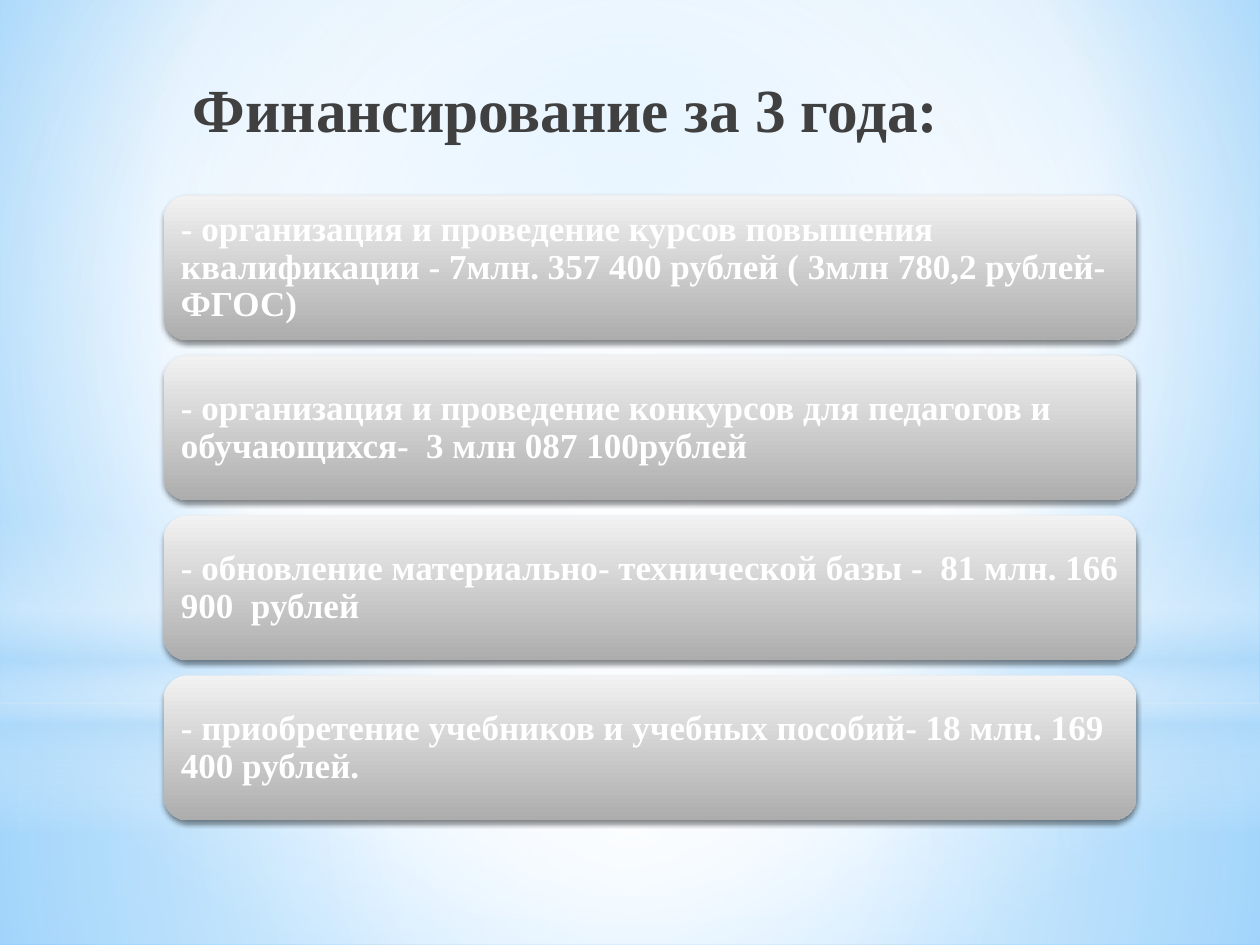
from pptx import Presentation
from pptx.dml.color import RGBColor
from pptx.enum.shapes import MSO_SHAPE
from pptx.enum.text import MSO_ANCHOR, PP_ALIGN
from pptx.oxml import parse_xml
from pptx.oxml.ns import nsdecls, qn
from pptx.util import Inches, Pt

RECT, OVAL, ROUNDED = MSO_SHAPE.RECTANGLE, MSO_SHAPE.OVAL, MSO_SHAPE.ROUNDED_RECTANGLE
LEFT, RIGHT = PP_ALIGN.LEFT, PP_ALIGN.RIGHT
TOP, MIDDLE = MSO_ANCHOR.TOP, MSO_ANCHOR.MIDDLE
FONT = "Times New Roman"

# Content
TITLE = "Финансирование за 3 года:"
EXPENSES = [
    "- организация и проведение курсов повышения квалификации - 7млн. 357 400 рублей ( 3млн 780,2 рублей- ФГОС)",
    "- организация и проведение конкурсов для педагогов и обучающихся-  3 млн 087 100рублей",
    "- обновление материально- технической базы -  81 млн. 166 900  рублей",
    "- приобретение учебников и учебных пособий- 18 млн. 169 400 рублей.",
]

# Gradient stops: position %, colour, opacity %
SKY = [(0, "9ED5FF", 100), (60, "FFFFFF", 100), (100, "5BB9FF", 100)]
SKY_FOCUS = (20, 10, 20, 60)
CENTRE = (50, 50, 50, 50)
CARD_FILL = [(0, "F2F2F2", 100), (100, "ADADAD", 100)]

# Backdrop layers: shape, top, height, stops, focus (None for top to bottom)
LAYERS = [
    (RECT, 5.58, 1.92, [(0, "FFFFFF", 91), (37, "FFFFFF", 76), (100, "B4DCFA", 79)], CENTRE),
    (RECT, 0, 5.58, [(0, "FFFFFF", 89), (48, "FFFFFF", 62), (100, "B4DCFA", 79)], CENTRE),
    (RECT, 4.12, 2.5, [(0, "FFFFFF", 0), (29, "FFFFFF", 30), (45, "B4DCFA", 40),
                       (55, "FFFFFF", 26), (65, "B4DCFA", 60), (100, "FFFFFF", 0)], None),
    (OVAL, 1.75, 5.58, [(0, "FFFFFF", 100), (56, "FFFFFF", 0)], CENTRE),
]

CARD_LEFT, CARD_TOP, CARD_WIDTH, CARD_HEIGHT, CARD_STEP = 1.3, 1.55, 7.72, 1.15, 1.27


def color(value):
    return RGBColor.from_string(value)


def set_gradient(fill, parent, stops, focus=None):
    """Fill with a circular gradient around focus, or a vertical one."""
    fill.gradient()
    stop_xml = "".join(
        f'<a:gs pos="{pos * 1000}"><a:srgbClr val="{shade}">'
        f'<a:alpha val="{opacity * 1000}"/></a:srgbClr></a:gs>'
        for pos, shade, opacity in stops)
    if focus:
        sides = " ".join(f'{side}="{part * 1000}"' for side, part in zip("ltrb", focus))
        direction = f'<a:path path="circle"><a:fillToRect {sides}/></a:path>'
    else:
        direction = '<a:lin ang="5400000" scaled="0"/>'
    gradient = parse_xml(f'<a:gradFill {nsdecls("a")} rotWithShape="1">'
                         f'<a:gsLst>{stop_xml}</a:gsLst>{direction}</a:gradFill>')
    parent.replace(parent.find(qn("a:gradFill")), gradient)


def add_panel(page, kind, left, top, width, height, stops, focus=None):
    panel = page.shapes.add_shape(kind, Inches(left), Inches(top), Inches(width), Inches(height))
    panel.shadow.inherit = False
    panel.line.fill.background()
    set_gradient(panel.fill, panel.element.spPr, stops, focus)
    return panel


def add_soft_shadow(shape):
    effects = shape.element.spPr.find(qn("a:effectLst"))
    effects.append(parse_xml(
        f'<a:outerShdw {nsdecls("a")} blurRad="{Pt(3.1)}" dist="{Pt(1.8)}" dir="5400000" '
        'rotWithShape="0"><a:srgbClr val="000000"><a:alpha val="45000"/></a:srgbClr></a:outerShdw>'))


def write(shape, text, size, shade, align, anchor):
    frame = shape.text_frame
    frame.word_wrap = True
    frame.vertical_anchor = anchor
    para = frame.paragraphs[0]
    para.text = text
    para.alignment = align
    font = para.font
    font.name, font.size, font.bold = FONT, Pt(size), True
    font.color.rgb = color(shade)
    return frame


deck = Presentation()
deck.slide_width, deck.slide_height = Inches(10), Inches(7.5)
page = deck.slides.add_slide(deck.slide_layouts[6])

# Background and its translucent layers
backdrop = page.background.fill
backdrop.solid()
set_gradient(backdrop, page.element.find(".//" + qn("p:bgPr")), SKY, SKY_FOCUS)
for kind, top, height, stops, focus in LAYERS:
    add_panel(page, kind, 0, top, 10, height, stops, focus)

# Title
title = page.shapes.add_textbox(Inches(0.43), Inches(0.52), Inches(7.12), Inches(1.25))
write(title, TITLE, 35, "404040", RIGHT, TOP)

# Expense cards
for row, expense in enumerate(EXPENSES):
    card = add_panel(page, ROUNDED, CARD_LEFT, CARD_TOP + row * CARD_STEP,
                     CARD_WIDTH, CARD_HEIGHT, CARD_FILL)
    add_soft_shadow(card)
    frame = write(card, expense, 20, "FFFFFF", LEFT, MIDDLE)
    frame.margin_left = frame.margin_right = Inches(0.08)
    frame.margin_top = frame.margin_bottom = Inches(0.08)
    frame.paragraphs[0].line_spacing = 0.9

deck.save("out.pptx")
